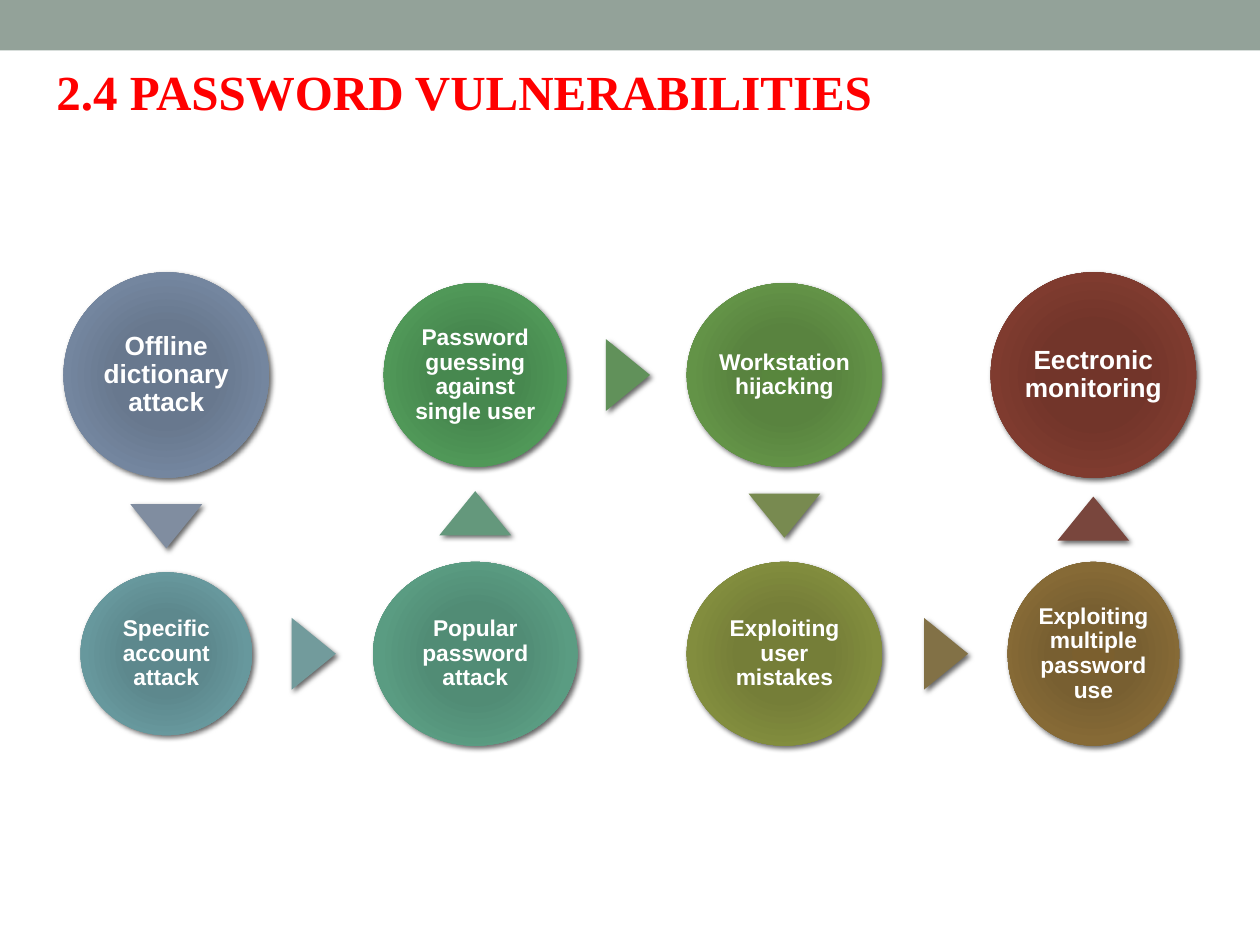
import pptx
import pptx.util
import pptx.dml.color
import pptx.enum.shapes
import pptx.enum.text
import pptx.oxml
import pptx.oxml.ns

Pt = pptx.util.Pt
RGB = pptx.dml.color.RGBColor.from_string
KIND = pptx.enum.shapes.MSO_SHAPE
ALIGN = pptx.enum.text.PP_ALIGN
NS = pptx.oxml.ns.nsdecls("a")

theme = {
    "bar": "93A299", "title": "FF0000", "text": "FFFFFF",
    "head_font": "Times New Roman", "font": "Arial",
    "head": 28, "big": 15, "small": 13,
}


def style(run, font, size, color):
    run.font.name = font
    run.font.size = Pt(size)
    run.font.bold = True
    run.font.color.rgb = RGB(color)


def add_form(kind, x, y, wide, high):
    """Add an outline-free shape with a soft shadow, centred on x, y."""
    form = slide.shapes.add_shape(
        kind, Pt(x - wide / 2), Pt(y - high / 2), Pt(wide), Pt(high))
    form.line.fill.background()
    form.shadow.inherit = False
    form._element.spPr.find(pptx.oxml.ns.qn("a:effectLst")).append(
        pptx.oxml.parse_xml(
            f'<a:outerShdw {NS} blurRad="{Pt(3)}" dist="{Pt(2)}" dir="2700000" '
            'algn="br" rotWithShape="0"><a:srgbClr val="000000">'
            '<a:alpha val="60000"/></a:srgbClr></a:outerShdw>'))
    return form


deck = pptx.Presentation()
deck.slide_width, deck.slide_height = Pt(720), Pt(540)
slide = deck.slides.add_slide(deck.slide_layouts[6])

# Top bar
bar = slide.shapes.add_shape(KIND.RECTANGLE, 0, 0, Pt(720), Pt(28.8))
bar.shadow.inherit = False
bar.fill.solid()
bar.fill.fore_color.rgb = RGB(theme["bar"])
bar.line.fill.background()

# Title
title = slide.shapes.add_textbox(Pt(25.2), Pt(31.7), Pt(492.5), Pt(41))
title.text_frame.word_wrap = False
title.text_frame.text = "2.4 PASSWORD VULNERABILITIES"
style(title.text_frame.paragraphs[0].runs[0],
      theme["head_font"], theme["head"], theme["title"])

# Steps in order: text, column, row, width, height, type size,
# gradient colours, colour of the arrow to the next step
steps = [
    ("Offline dictionary attack", 0, 0, 117.4, 117.4, "big",
     "677790 68788E 74869F 808DA0", "808DA0"),
    ("Specific account attack", 0, 1, 98, 93, "small",
     "5B8A8F 5D888D 67989D 74999D", "729B9C"),
    ("Popular password attack", 1, 1, 116.8, 105, "small",
     "4E8E75 518C75 5A9C82 689A86", "64987C"),
    ("Password guessing against single user", 1, 0, 104.6, 105, "small",
     "458B4D 47884F 509858 5E9465", "61915A"),
    ("Workstation hijacking", 2, 0, 111.6, 105, "small",
     "58863D 59833F 639347 6B8E55", "788A50"),
    ("Exploiting user mistakes", 2, 1, 111.6, 105, "small",
     "778135 757E38 828D3E 80884D", "827146"),
    ("Exploiting multiple password use", 3, 1, 98, 105, "small",
     "7B5F2E 785F31 866A36 806B45", "79463D"),
    ("Eectronic monitoring", 3, 0, 117.4, 117.4, "big",
     "743327 72352A 7F3B2F 79463D", None),
]
left, top, col_gap, row_gap = 95, 214.3, 176.6, 159.3
spots = [(left + col * col_gap, top + row * row_gap)
         for _, col, row, *_ in steps]

# Circles
for (text, _, _, wide, high, size, hues, _), (x, y) in zip(steps, spots):
    disc = add_form(KIND.OVAL, x, y, wide, high)
    stops = "".join(
        f'<a:gs pos="{pos}000"><a:srgbClr val="{hue}"/></a:gs>'
        for pos, hue in zip((0, 34, 70, 100), hues.split()))
    disc._element.spPr.insert(2, pptx.oxml.parse_xml(
        f'<a:gradFill {NS} rotWithShape="1"><a:gsLst>{stops}</a:gsLst>'
        '<a:path path="circle"><a:fillToRect l="100000" t="100000" '
        'r="100000" b="100000"/></a:path></a:gradFill>'))
    frame = disc.text_frame
    frame.word_wrap = True
    frame.vertical_anchor = pptx.enum.text.MSO_ANCHOR.MIDDLE
    frame.margin_left = frame.margin_right = Pt(1.3)
    frame.margin_top = frame.margin_bottom = Pt(1.3)
    frame.text = text
    para = frame.paragraphs[0]
    para.alignment = ALIGN.CENTER
    para.line_spacing = 0.9
    style(para.runs[0], theme["font"], theme[size], theme["text"])

# Arrows, each midway in the gap between two circles
nudge = 0.7
for i, (x, y) in enumerate(spots[:-1]):
    next_x, next_y = spots[i + 1]
    wide, high = steps[i][3:5]
    next_wide, next_high = steps[i + 1][3:5]
    if next_x > x:
        turn = 90
        mid_x = (x + next_x + (wide - next_wide) / 2) / 2 + nudge
        mid_y = y
    else:
        way = 1 if next_y > y else -1
        turn = 180 if way > 0 else 0
        mid_x = x
        mid_y = (y + next_y + way * (high - next_high) / 2) / 2 + way * nudge
    arrow = add_form(KIND.ISOSCELES_TRIANGLE, mid_x, mid_y, 41, 25.2)
    arrow.rotation = turn
    arrow.fill.solid()
    arrow.fill.fore_color.rgb = RGB(steps[i][7])

deck.save("out.pptx")
